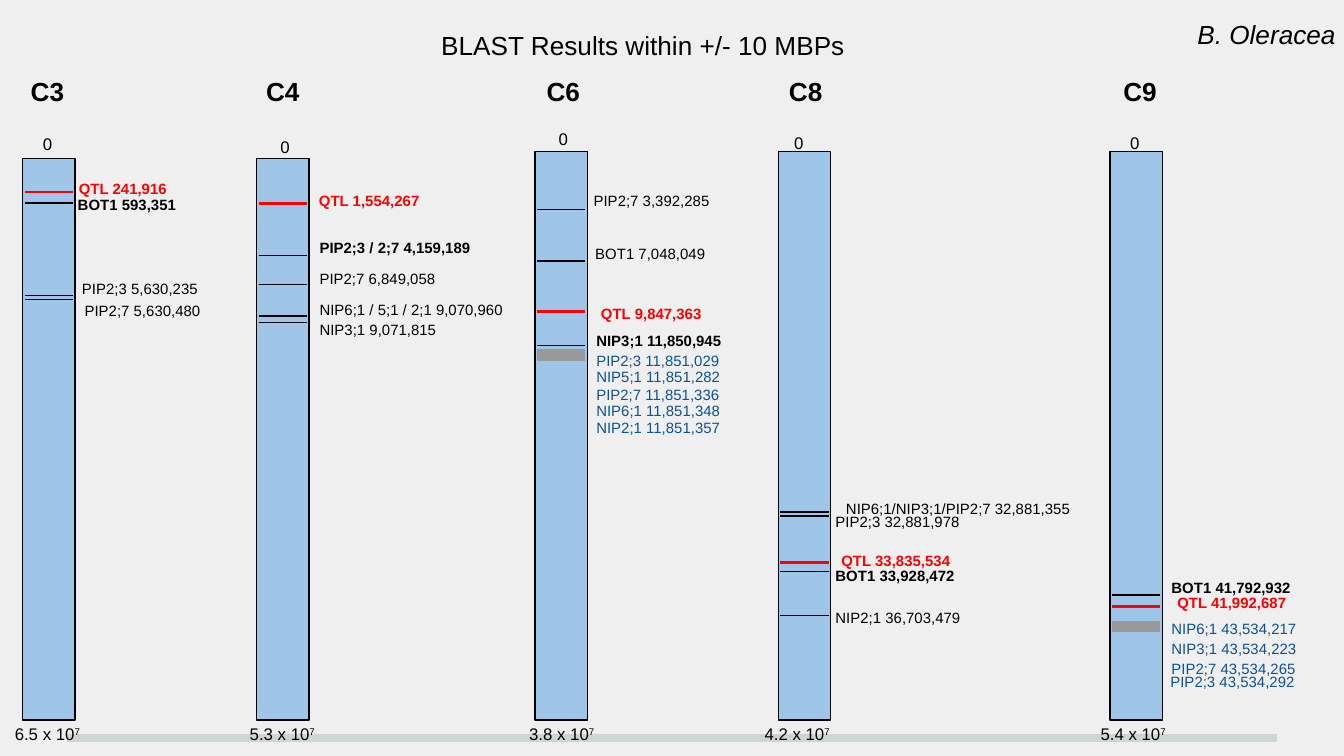
from dataclasses import dataclass

from pptx import Presentation
from pptx.dml.color import RGBColor
from pptx.enum.shapes import MSO_CONNECTOR, MSO_SHAPE
from pptx.enum.text import MSO_ANCHOR, PP_ALIGN as Align
from pptx.oxml.ns import qn
from pptx.util import Cm, Pt
from lxml import etree

FONT = "Arial"
BLACK, RED, BLUE, GREY = "000000", "FF0000", "0B5394", "999999"
BAR_FILL, BACKGROUND, FOOTER = "9FC5E8", "EFEFEF", "CFD4D4"
BAR_WIDTH, BAR_BOTTOM = 0.99, 13.61
MARK_INSET, MARK_LENGTH = 0.04, 0.91
GENE, QTL, CLUSTER = (BLACK, 0.75), (RED, 1.5), (GREY, 6)


@dataclass
class Label:
    text: str
    left: float
    top: float
    width: float = 4.11
    height: float = 0.91
    color: str = BLACK
    bold: bool = False
    align: Align = Align.LEFT
    spacing: float = 1.0


@dataclass
class Chromosome:
    name: str
    name_left: float
    name_width: float
    bar_left: float
    bar_top: float
    zero_left: float
    zero_top: float
    size: str
    size_left: float
    marks: list
    labels: list


def qtl(text, left, top):
    return Label(text, left, top, 3.76, color=RED, bold=True,
                 align=Align.RIGHT, spacing=1.15)


def spaced(text, left, top, height=0.91, color=BLACK, bold=False):
    """A wide label with looser line spacing, used beside C8 and C9."""
    return Label(text, left, top, 5.46, height, color, bold, spacing=1.15)


CHROMOSOMES = [
    Chromosome(
        "C3", 0.33, 1.4, 0.43, 3.0, 0.56, 2.34, "6.5 x 10", 0.03,
        [(3.63, QTL), (3.84, GENE), (5.59, GENE), (5.66, GENE)],
        [Label("QTL 241,916", 1.24, 3.23, 3.12, 0.79, RED, True),
         Label("BOT1 593,351", 1.22, 3.53, 3.56, bold=True),
         Label("PIP2;3 5,630,235", 1.3, 5.11, 4.45, 1.12),
         Label("PIP2;7 5,630,480", 1.35, 5.54, 4.24, 1.12)]),
    Chromosome(
        "C4", 4.78, 1.6, 4.85, 3.0, 5.05, 2.39, "5.3 x 10", 4.47,
        [(3.84, QTL), (4.83, GENE), (5.38, GENE), (5.97, GENE), (6.1, GENE)],
        [qtl("QTL 1,554,267", 4.42, 3.38),
         Label("PIP2;3 / 2;7 4,159,189", 5.79, 4.34, bold=True),
         Label("PIP2;7 6,849,058", 5.79, 4.93),
         Label("NIP6;1 / 5;1 / 2;1 9,070,960", 5.79, 5.51, 4.9),
         Label("NIP3;1 9,071,815", 5.79, 5.89)]),
    Chromosome(
        "C6", 10.08, 1.6, 10.11, 2.87, 10.31, 2.24, "3.8 x 10", 9.75,
        [(3.96, GENE), (4.93, GENE), (5.89, QTL), (6.53, GENE),
         (6.71, CLUSTER)],
        [Label("PIP2;7 3,392,285", 10.97, 3.45, 3.56, 1.12),
         Label("BOT1 7,048,049", 11.0, 4.45, 3.56, 1.12),
         qtl("QTL 9,847,363", 9.75, 5.51),
         Label("NIP3;1 11,850,945", 11.02, 6.1, bold=True),
         Label("PIP2;3 11,851,029", 11.02, 6.48, color=BLUE),
         Label("NIP5;1 11,851,282", 11.02, 6.78, color=BLUE),
         Label("PIP2;7 11,851,336", 11.02, 7.11, color=BLUE),
         Label("NIP6;1 11,851,348", 11.02, 7.42, color=BLUE),
         Label("NIP2;1 11,851,357", 11.02, 7.75, color=BLUE)]),
    Chromosome(
        "C8", 14.66, 1.4, 14.71, 2.87, 14.76, 2.31, "4.2 x 10", 14.2,
        [(9.68, GENE), (9.75, GENE), (10.64, QTL), (10.8, GENE),
         (11.63, GENE)],
        [Label("NIP6;1/NIP3;1/PIP2;7 32,881,355", 14.76, 9.19, 5.72,
               align=Align.RIGHT, spacing=1.15),
         spaced("PIP2;3 32,881,978", 15.54, 9.45),
         qtl("QTL 33,835,534", 14.45, 10.19),
         spaced("BOT1 33,928,472", 15.54, 10.46, 1.12, bold=True),
         spaced("NIP2;1 36,703,479", 15.54, 11.25)]),
    Chromosome(
        "C9", 20.98, 1.4, 20.98, 2.87, 21.11, 2.31, "5.4 x 10", 20.55,
        [(11.25, GENE), (11.46, QTL), (11.84, CLUSTER)],
        [spaced("BOT1 41,792,932", 21.89, 10.69, 0.79, bold=True),
         qtl("QTL 41,992,687", 20.8, 10.97),
         spaced("NIP6;1 43,534,217", 21.89, 11.46, 1.12, BLUE),
         spaced("NIP3;1 43,534,223", 21.89, 11.84, 1.12, BLUE),
         spaced("PIP2;7 43,534,265", 21.89, 12.22, 1.12, BLUE),
         Label("PIP2;3 43,534,292", 21.87, 12.55, color=BLUE)]),
]


def rgb(hex_color):
    return RGBColor.from_string(hex_color)


def add_run(paragraph, text, size, color=BLACK, bold=False, italic=False):
    run = paragraph.add_run()
    run.text = text
    font = run.font
    font.name, font.size = FONT, Pt(size)
    font.bold, font.italic = bold, italic
    font.color.rgb = rgb(color)
    return run


def add_paragraph_box(slide, left, top, width, height,
                      align=Align.LEFT, spacing=1.0):
    """Add an empty text box and return its paragraph."""
    box = slide.shapes.add_textbox(Cm(left), Cm(top), Cm(width), Cm(height))
    frame = box.text_frame
    frame.word_wrap = True
    frame.vertical_anchor = MSO_ANCHOR.TOP
    frame.margin_left = frame.margin_right = Cm(0.25)
    frame.margin_top = frame.margin_bottom = Cm(0.25)
    paragraph = frame.paragraphs[0]
    paragraph.alignment, paragraph.line_spacing = align, spacing
    return paragraph


def add_horizontal_line(slide, left, y, length, color, weight):
    line = slide.shapes.add_connector(
        MSO_CONNECTOR.STRAIGHT, Cm(left), Cm(y), Cm(left + length), Cm(y))
    line.line.color.rgb = rgb(color)
    line.line.width = Pt(weight)
    etree.SubElement(line._element.spPr, qn("a:effectLst"))


def add_bar(slide, left, top):
    bar = slide.shapes.add_shape(MSO_SHAPE.RECTANGLE, Cm(left), Cm(top),
                                 Cm(BAR_WIDTH), Cm(BAR_BOTTOM - top))
    bar.shadow.inherit = False
    bar.fill.solid()
    bar.fill.fore_color.rgb = rgb(BAR_FILL)
    bar.line.color.rgb = rgb(BLACK)
    bar.line.width = Pt(0.75)


def add_label(slide, label):
    paragraph = add_paragraph_box(slide, label.left, label.top, label.width,
                                  label.height, label.align, label.spacing)
    add_run(paragraph, label.text, 8, label.color, label.bold)


def add_chromosome(slide, chromosome):
    add_bar(slide, chromosome.bar_left, chromosome.bar_top)
    name = add_paragraph_box(slide, chromosome.name_left, 1.17,
                             chromosome.name_width, 0.79)
    add_run(name, chromosome.name, 14, bold=True)
    zero = add_paragraph_box(slide, chromosome.zero_left,
                             chromosome.zero_top, 1.4, 0.53)
    add_run(zero, "0", 9)
    size = add_paragraph_box(slide, chromosome.size_left, 13.49, 2.92, 0.58)
    add_run(size, chromosome.size, 9)
    exponent = add_run(size, "7", 9)
    exponent._r.get_or_add_rPr().set("baseline", "30000")
    for label in chromosome.labels:
        add_label(slide, label)
    for y, (color, weight) in chromosome.marks:
        add_horizontal_line(slide, chromosome.bar_left + MARK_INSET, y,
                            MARK_LENGTH, color, weight)


def main():
    deck = Presentation()
    deck.slide_width, deck.slide_height = Cm(25.4), Cm(14.29)
    slide = deck.slides.add_slide(deck.slide_layouts[6])
    slide.background.fill.solid()
    slide.background.fill.fore_color.rgb = rgb(BACKGROUND)

    add_horizontal_line(slide, 1.27, 13.95, 22.86, FOOTER, 4)
    for chromosome in CHROMOSOMES:
        add_chromosome(slide, chromosome)
    species = add_paragraph_box(slide, 22.38, 0.1, 3.56, 0.69)
    add_run(species, "B. Oleracea", 14, italic=True)
    title = add_paragraph_box(slide, 5.08, 0.3, 14.15, 0.91, Align.CENTER)
    add_run(title, "BLAST Results within +/- 10 MBPs", 14)
    deck.save("out.pptx")


if __name__ == "__main__":
    main()
